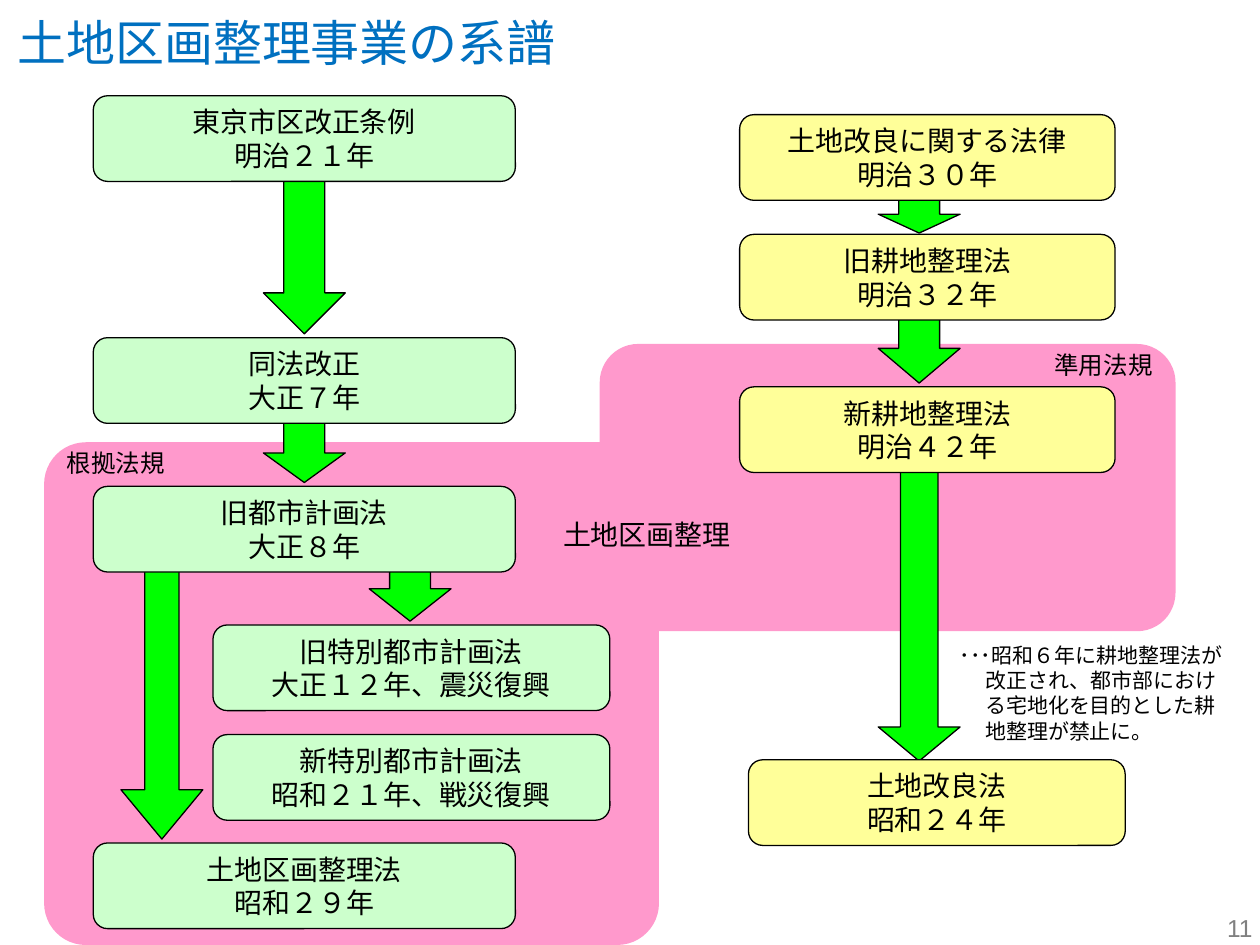
from pptx import Presentation
from pptx.dml.color import RGBColor
from pptx.enum.shapes import MSO_SHAPE
from pptx.enum.text import MSO_ANCHOR, PP_ALIGN
from pptx.util import Inches, Pt

ROUND, ARROW = MSO_SHAPE.ROUNDED_RECTANGLE, MSO_SHAPE.DOWN_ARROW
TOP, MIDDLE, BOTTOM = MSO_ANCHOR.TOP, MSO_ANCHOR.MIDDLE, MSO_ANCHOR.BOTTOM
LEFT, CENTER, RIGHT = PP_ALIGN.LEFT, PP_ALIGN.CENTER, PP_ALIGN.RIGHT
PINK, GREEN, PALE_GREEN, YELLOW = "FF99CC", "00FF00", "CCFFCC", "FFFF99"
BLACK, BLUE, GRAY = "000000", "0070C0", "808080"


def add_shape(kind, box, fill, adjustments, outlined=True):
    s = slide.shapes.add_shape(kind, *map(Inches, box))
    s.shadow.inherit = False
    s.fill.solid()
    s.fill.fore_color.rgb = RGBColor.from_string(fill)
    for i, value in enumerate(adjustments):
        s.adjustments[i] = value
    if outlined:
        s.line.color.rgb = RGBColor.from_string(BLACK)
        s.line.width = Pt(0.75)
    else:
        s.line.fill.background()
    return s


def write(s, lines, size, font="Arial", color=BLACK, align=LEFT, anchor=TOP, wrap=False):
    tf = s.text_frame
    tf.word_wrap = wrap
    tf.vertical_anchor = anchor
    for i, line in enumerate(lines):
        p = tf.paragraphs[0] if i == 0 else tf.add_paragraph()
        p.alignment = align
        r = p.add_run()
        r.text = line
        for name, value in {"size": Pt(size), "name": font}.items():
            setattr(r.font, name, value)
        r.font.color.rgb = RGBColor.from_string(color)


prs = Presentation()
prs.slide_width, prs.slide_height = Inches(10), Inches(7.5)
slide = prs.slides.add_slide(prs.slide_layouts[6])

# Pink land readjustment area
add_shape(ROUND, (4.76, 2.73, 4.57, 2.28), PINK, [0.134], outlined=False)
add_shape(ROUND, (0.35, 3.51, 4.88, 3.99), PINK, [0.083], outlined=False)

# Arrows: left, top, height, shaft width, head length
arrows = [
    (2.09, 1.39, 1.26, 0.5, 0.5),
    (2.09, 3.36, 0.47, 0.5, 0.5),
    (0.96, 3.93, 2.73, 0.417, 0.603),
    (2.93, 4.01, 0.92, 0.5, 0.395),
    (6.97, 1.55, 0.3, 0.5, 0.5),
    (6.97, 2.49, 0.55, 0.5, 0.5),
    (6.97, 3.36, 2.68, 0.458, 0.416),
]
for left, top, height, shaft, head in arrows:
    add_shape(ARROW, (left, top, 0.65, height), GREEN, [shaft, head])

# Laws: city planning on the left, farmland on the right
columns = {
    (0.74, 3.35, PALE_GREEN): [
        (0.76, "東京市区改正条例", "明治２１年"),
        (2.68, "同法改正", "大正７年"),
        (3.86, "旧都市計画法", "大正８年"),
        (6.69, "土地区画整理法", "昭和２９年"),
    ],
    (1.69, 3.15, PALE_GREEN): [
        (4.96, "旧特別都市計画法", "大正１２年、震災復興"),
        (5.83, "新特別都市計画法", "昭和２１年、戦災復興"),
    ],
    (5.87, 2.98, YELLOW): [
        (0.91, "土地改良に関する法律", "明治３０年"),
        (1.86, "旧耕地整理法", "明治３２年"),
        (3.07, "新耕地整理法", "明治４２年"),
    ],
    (5.94, 2.99, YELLOW): [(6.03, "土地改良法", "昭和２４年")],
}
for (left, width, fill), laws in columns.items():
    for top, *lines in laws:
        s = add_shape(ROUND, (left, top, width, 0.68), fill, [0.167])
        write(s, lines, 16, "Times New Roman", align=CENTER, anchor=MIDDLE)

# Title, labels, note and page number
note = "･･･昭和６年に耕地整理法が改正され、都市部における宅地化を目的とした耕地整理が禁止に。"
texts = [
    ((0.04, 0.05, 6.33, 0.57), "土地区画整理事業の系譜", 28, {"color": BLUE, "wrap": True}),
    ((4.37, 4.06, 1.55, 0.37), "土地区画整理", 16, {}),
    ((0.43, 3.51, 0.99, 0.34), "根拠法規", 14, {}),
    ((8.27, 2.73, 0.99, 0.34), "準用法規", 14, {}),
    ((7.71, 7.01, 2.33, 0.52), "11", 14,
     {"color": GRAY, "align": RIGHT, "anchor": BOTTOM, "wrap": True}),
    ((7.52, 5.05, 2.28, 0.91), note, 12, {"wrap": True}),
]
for box, text, size, style in texts:
    s = slide.shapes.add_textbox(*map(Inches, box))
    write(s, [text], size, **style)
    if text == note:
        # Hanging indent
        pPr = s.text_frame.paragraphs[0]._p.get_or_add_pPr()
        pPr.set("marL", str(Inches(0.2)))
        pPr.set("indent", str(Inches(-0.2)))

prs.save("out.pptx")
